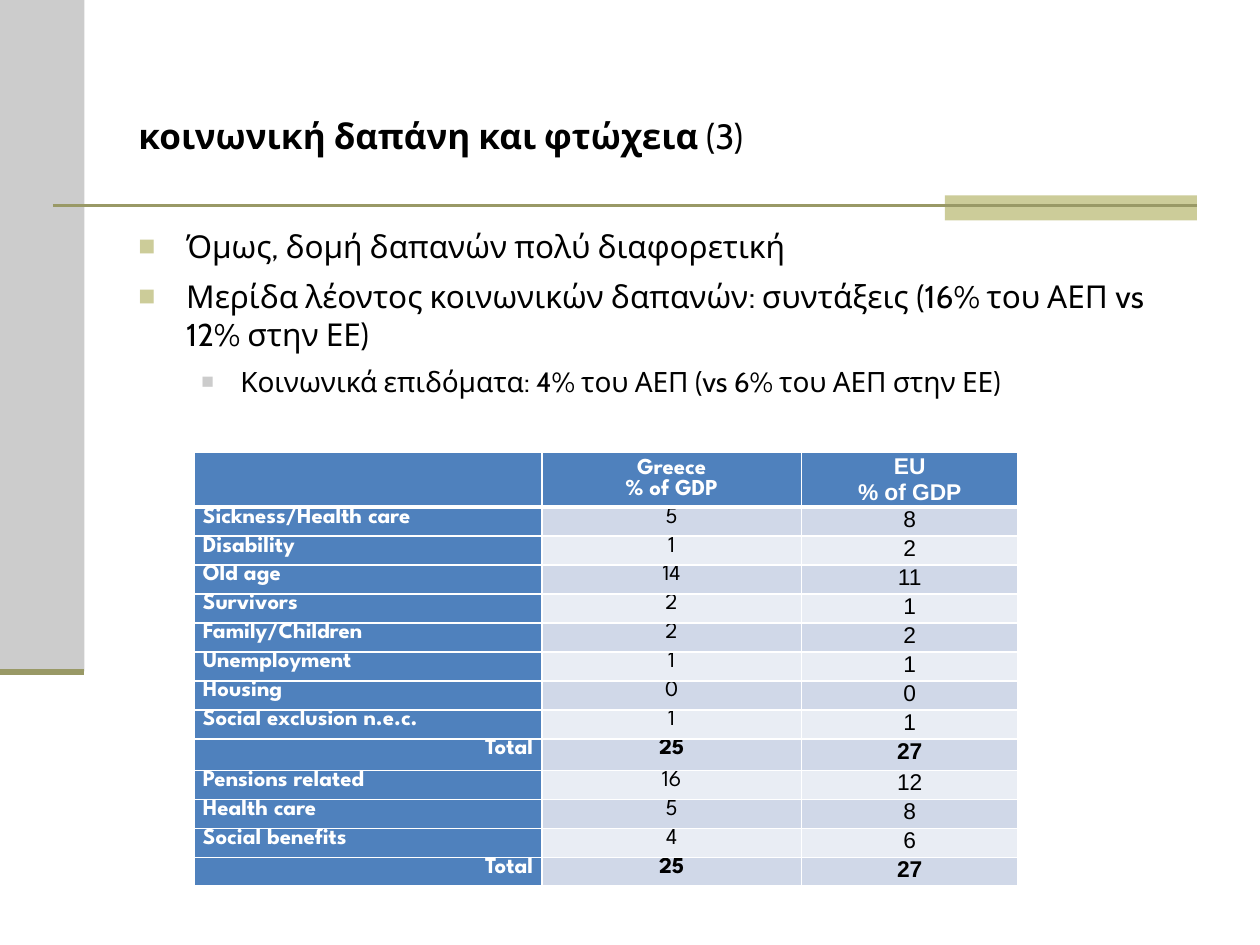
from lxml import etree
from pptx import Presentation
from pptx import util as u
from pptx.dml.color import RGBColor
from pptx.enum import shapes, text
from pptx.oxml.ns import qn

BLACK, WHITE = RGBColor(0, 0, 0), RGBColor(255, 255, 255)
GREY, KHAKI, OLIVE = (RGBColor.from_string(c) for c in ("CCCCCC", "CCCC99", "999966"))
BLUE = RGBColor.from_string("4F81BD")
BANDS = [RGBColor.from_string(c) for c in ("D0D8E8", "E9EDF4")]

BODY_FONT, TABLE_FONT, EU_FONT = "Cabin", "League Spartan", "Arial"

TITLE = [("κοινωνική δαπάνη και φτώχεια", True), (" (3)", False)]
# text, level
POINTS = [
    ("Όμως, δομή δαπανών πολύ διαφορετική", 0),
    ("Μερίδα λέοντος κοινωνικών δαπανών: συντάξεις (16% του ΑΕΠ vs 12% στην ΕΕ)", 0),
    ("Κοινωνικά επιδόματα: 4% του ΑΕΠ (vs 6% του ΑΕΠ στην ΕΕ)", 1),
]
# size, left margin, hanging indent, bullet colour, bullet size in percent
LEVELS = [(18, 0.38, 0.38, KHAKI, 90), (16, 0.81, 0.31, GREY, 75)]

SPENDING = [
    ("", "Greece\n% of GDP", "EU\n% of GDP"),
    ("Sickness/Health care", 5, 8),
    ("Disability", 1, 2),
    ("Old age", 14, 11),
    ("Survivors", 2, 1),
    ("Family/Children", 2, 2),
    ("Unemployment", 1, 1),
    ("Housing", 0, 0),
    ("Social exclusion n.e.c.", 1, 1),
    ("Total", 25, 27),
    ("Pensions related", 16, 12),
    ("Health care", 5, 8),
    ("Social benefits", 4, 6),
    ("Total", 25, 27),
]
COLUMN_WIDTHS = [2.76, 2.06, 1.72]
HEADER_HEIGHT, ROW_HEIGHT, FIRST_TOTAL_HEIGHT = 0.4, 0.23, 0.25
FIRST_TOTAL = 9


def style(run, size, font, color, bold=False):
    run.font.size, run.font.name, run.font.bold = u.Pt(size), font, bold
    run.font.color.rgb = color


def add_block(slide, left, top, width, height, color):
    block = slide.shapes.add_shape(
        shapes.MSO_SHAPE.RECTANGLE, *map(u.Inches, (left, top, width, height)))
    block.shadow.inherit = False
    block.fill.solid()
    block.fill.fore_color.rgb = color
    block.line.fill.background()


def add_rule(slide, left, right, y, weight):
    rule = slide.shapes.add_connector(
        shapes.MSO_CONNECTOR.STRAIGHT, *map(u.Inches, (left, y, right, y)))
    rule.line.color.rgb = OLIVE
    rule.line.width = u.Pt(weight)
    etree.SubElement(rule._element.spPr, qn("a:effectLst"))


def add_frame(slide, top, height, anchor):
    frame = slide.shapes.add_textbox(*map(u.Inches, (1, top, 8.5, height))).text_frame
    frame.word_wrap = True
    frame.vertical_anchor = anchor
    return frame


def add_title(slide):
    frame = add_frame(slide, 0.6, 0.95, text.MSO_ANCHOR.MIDDLE)
    for words, bold in TITLE:
        run = frame.paragraphs[0].add_run()
        run.text = words
        style(run, 20, BODY_FONT, BLACK, bold)


def set_bullet(paragraph, margin, hanging, color, percent):
    props = paragraph._p.get_or_add_pPr()
    props.set("marL", str(u.Inches(margin)))
    props.set("indent", str(-u.Inches(hanging)))
    tint = etree.SubElement(props, qn("a:buClr"))
    etree.SubElement(tint, qn("a:srgbClr"), val=str(color))
    etree.SubElement(props, qn("a:buSzPct"), val=str(percent * 1000))
    etree.SubElement(props, qn("a:buFont"), typeface="Arial")
    etree.SubElement(props, qn("a:buChar"), char="■")


def add_points(slide):
    frame = add_frame(slide, 1.75, 4.95, text.MSO_ANCHOR.TOP)
    frame.text = "\n".join(words for words, _ in POINTS)
    for paragraph, (_, level) in zip(frame.paragraphs, POINTS):
        size, *bullet = LEVELS[level]
        paragraph.level = level
        paragraph.space_before = paragraph.space_after = u.Pt(size * 0.2)
        set_bullet(paragraph, *bullet)
        style(paragraph.runs[0], size, BODY_FONT, BLACK)


def set_borders(cell, row):
    """White borders, thicker between the header and the first data row."""
    props = cell._tc.get_or_add_tcPr()
    weights = {"L": 1, "R": 1, "T": 3 if row == 1 else 1, "B": 3 if row == 0 else 1}
    for side, weight in weights.items():
        line = etree.SubElement(props, qn(f"a:ln{side}"), w=str(u.Pt(weight)))
        fill = etree.SubElement(line, qn("a:solidFill"))
        etree.SubElement(fill, qn("a:srgbClr"), val=str(WHITE))


def fill_cell(cell, value, row, column, is_total):
    on_blue = row == 0 or column == 0
    set_borders(cell, row)
    cell.fill.solid()
    cell.fill.fore_color.rgb = BLUE if on_blue else BANDS[(row - 1) % 2]
    cell.margin_left = cell.margin_right = u.Inches(0.07)
    cell.margin_top = cell.margin_bottom = 0
    cell.vertical_anchor = text.MSO_ANCHOR.TOP if row else text.MSO_ANCHOR.MIDDLE
    cell.text_frame.text = str(value)
    for paragraph in cell.text_frame.paragraphs:
        if column:
            paragraph.alignment = text.PP_ALIGN.CENTER
        elif is_total:
            paragraph.alignment = text.PP_ALIGN.RIGHT
        for run in paragraph.runs:
            style(run, 13, EU_FONT if column == 2 else TABLE_FONT,
                  WHITE if on_blue else BLACK, on_blue or is_total)


def add_spending_table(slide):
    heights = [HEADER_HEIGHT] + [ROW_HEIGHT] * (len(SPENDING) - 1)
    heights[FIRST_TOTAL] = FIRST_TOTAL_HEIGHT
    table = slide.shapes.add_table(
        len(SPENDING), len(COLUMN_WIDTHS),
        *map(u.Inches, (1.54, 3.59, sum(COLUMN_WIDTHS), sum(heights)))).table
    for column, width in zip(table.columns, COLUMN_WIDTHS):
        column.width = u.Inches(width)
    for r, (values, height) in enumerate(zip(SPENDING, heights)):
        table.rows[r].height = u.Inches(height)
        for c, value in enumerate(values):
            fill_cell(table.cell(r, c), value, r, c, values[0] == "Total")


def main():
    deck = Presentation()
    deck.slide_width, deck.slide_height = u.Inches(10), u.Inches(7.5)
    slide = deck.slides.add_slide(deck.slide_layouts[6])
    add_block(slide, 0, 0, 0.67, 5.33, GREY)
    add_block(slide, 7.5, 1.55, 2, 0.2, KHAKI)
    add_rule(slide, 0.42, 9.5, 1.63, 1.5)
    add_rule(slide, 0, 0.67, 5.33, 3.5)
    add_title(slide)
    add_points(slide)
    add_spending_table(slide)
    deck.save("out.pptx")


if __name__ == "__main__":
    main()
